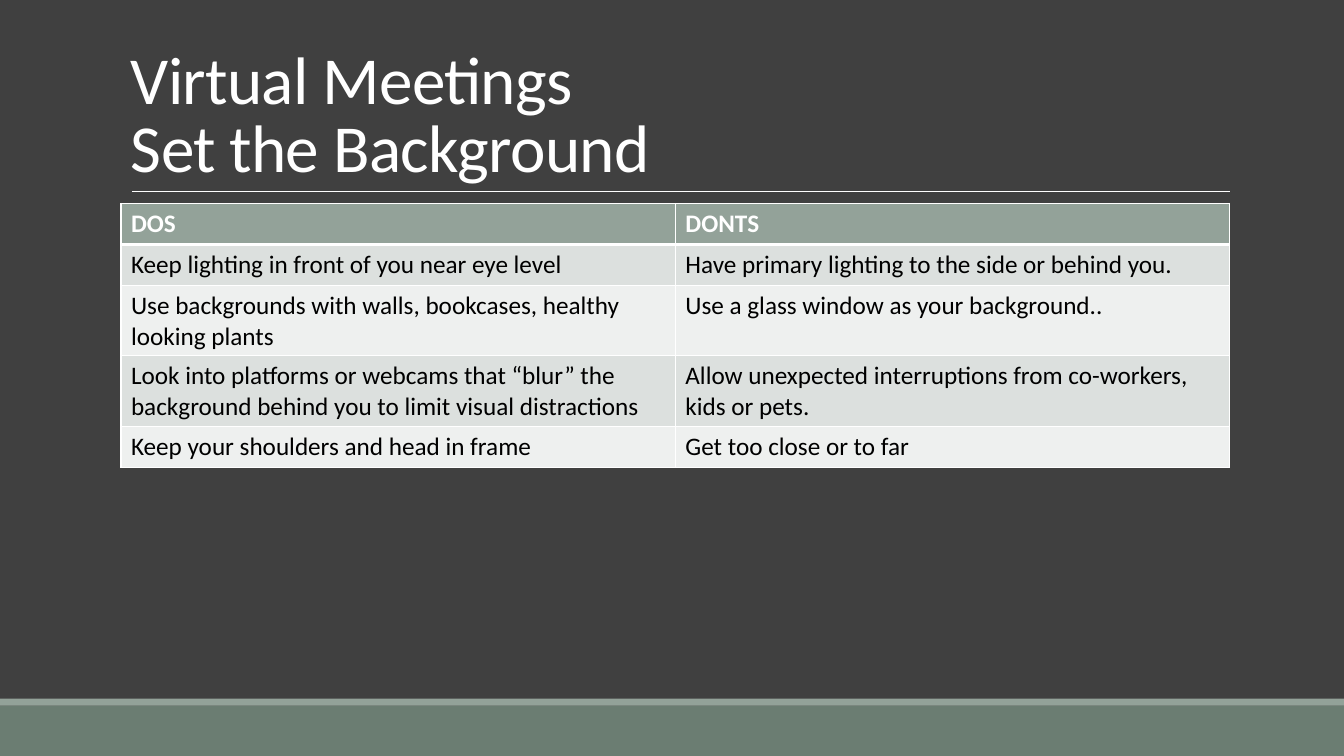
from dataclasses import dataclass

from lxml import etree
from pptx import Presentation
from pptx.dml.color import RGBColor
from pptx.enum.shapes import MSO_CONNECTOR, MSO_SHAPE
from pptx.enum.text import MSO_ANCHOR
from pptx.oxml.ns import qn
from pptx.util import Pt

RECTANGLE = MSO_SHAPE.RECTANGLE
STRAIGHT = MSO_CONNECTOR.STRAIGHT
BOTTOM = MSO_ANCHOR.BOTTOM
TOP = MSO_ANCHOR.TOP


@dataclass(frozen=True)
class Theme:
    font: str = "Calibri"
    title_size: float = 48
    table_size: float = 18
    background: str = "404040"
    footer: str = "6B7D72"
    accent: str = "93A299"
    light: str = "FFFFFF"
    dark: str = "000000"
    bands: tuple = ("DCE0DE", "EEF0EF")


THEME = Theme()
SLIDE_WIDTH, SLIDE_HEIGHT = 960, 540
TITLE_LINES = ("Virtual Meetings", "Set the Background")
TABLE_ROWS = (
    ("DOS", "DONTS"),
    ("Keep lighting in front of you near eye level",
     "Have primary lighting to the side or behind you."),
    ("Use backgrounds with walls, bookcases, healthy looking plants",
     "Use a glass window as your background.."),
    ("Look into platforms or webcams that “blur” the background behind you to limit visual distractions",
     "Allow unexpected interruptions from co-workers, kids or pets."),
    ("Keep your shoulders and head in frame", "Get too close or to far"),
)


def write_text(text_frame, *lines, size, color, bold=False, line_spacing=None, tracking=None):
    """Write the lines as one paragraph, parted by line breaks; tracking is in points."""
    paragraph = text_frame.paragraphs[0]
    if line_spacing:
        paragraph.line_spacing = line_spacing
    for index, line in enumerate(lines):
        if index:
            paragraph.add_line_break()
        run = paragraph.add_run()
        run.text = line
        run.font.name = THEME.font
        run.font.size = Pt(size)
        run.font.bold = bold
        run.font.color.rgb = RGBColor.from_string(color)
        if tracking is not None:
            run.font._element.set("spc", str(round(tracking * 100)))


def set_margins(target, horizontal, vertical):
    target.margin_left = target.margin_right = Pt(horizontal)
    target.margin_top = target.margin_bottom = Pt(vertical)


def set_fill(fill, color):
    fill.solid()
    fill.fore_color.rgb = RGBColor.from_string(color)


def add_bar(slide, left, top, width, height, color):
    bar = slide.shapes.add_shape(RECTANGLE, Pt(left), Pt(top), Pt(width), Pt(height))
    bar.shadow.inherit = False
    set_fill(bar.fill, color)
    bar.line.fill.background()


def add_footer(slide, left, top, width, height):
    stripe_height = 5
    add_bar(slide, left, top + stripe_height, width, height - stripe_height, THEME.footer)
    add_bar(slide, left, top, width, stripe_height, THEME.accent)


def add_title(slide, left, top, width, height):
    """Place the title at the bottom of the box, with a rule beneath it."""
    inset = 7.2
    bottom = top + height
    rule = slide.shapes.add_connector(
        STRAIGHT, Pt(left + inset + 0.7), Pt(bottom), Pt(left + width), Pt(bottom))
    rule.line.width = Pt(0.5)
    rule.line.color.rgb = RGBColor.from_string(THEME.light)
    etree.SubElement(rule._element.spPr, qn("a:effectLst"))

    title = slide.shapes.add_textbox(Pt(left), Pt(top), Pt(width), Pt(height))
    text_frame = title.text_frame
    text_frame.word_wrap = True
    text_frame.vertical_anchor = BOTTOM
    set_margins(text_frame, inset, 3.6)
    write_text(text_frame, *TITLE_LINES, size=THEME.title_size, color=THEME.light,
               line_spacing=0.85, tracking=-0.5)


def set_borders(cell, **widths):
    """Draw the cell's borders; widths are in points, keyed by side in the order L, R, T, B."""
    properties = cell._tc.get_or_add_tcPr()
    for side, width in widths.items():
        line = etree.SubElement(properties, qn(f"a:ln{side}"), w=str(Pt(width)))
        fill = etree.SubElement(line, qn("a:solidFill"))
        etree.SubElement(fill, qn("a:srgbClr"), val=THEME.light)


def add_advice_table(slide, left, top, width, row_height):
    row_count, column_count = len(TABLE_ROWS), len(TABLE_ROWS[0])
    frame = slide.shapes.add_table(
        row_count, column_count, Pt(left), Pt(top), Pt(width), Pt(row_height * row_count))
    table = frame.table
    for column in table.columns:
        column.width = Pt(width / column_count)
    for row_index, texts in enumerate(TABLE_ROWS):
        is_header = row_index == 0
        table.rows[row_index].height = Pt(row_height)
        for column_index, text in enumerate(texts):
            cell = table.cell(row_index, column_index)
            set_margins(cell, 7.2, 3.6)
            cell.vertical_anchor = TOP
            set_borders(cell, L=1, R=1, T=3 if row_index == 1 else 1, B=3 if is_header else 1)
            set_fill(cell.fill, THEME.accent if is_header else THEME.bands[(row_index - 1) % 2])
            write_text(cell.text_frame, text, size=THEME.table_size, bold=is_header,
                       color=THEME.light if is_header else THEME.dark)


def main():
    presentation = Presentation()
    presentation.slide_width, presentation.slide_height = Pt(SLIDE_WIDTH), Pt(SLIDE_HEIGHT)
    slide = presentation.slides.add_slide(presentation.slide_layouts[6])
    set_fill(slide.background.fill, THEME.background)
    left, width = 86.4, 792
    add_footer(slide, 0, 499, SLIDE_WIDTH, 41)
    add_title(slide, left, 22.3, width, 114.5)
    add_advice_table(slide, left, 145.4, width, 29.2)
    presentation.save("out.pptx")


if __name__ == "__main__":
    main()
